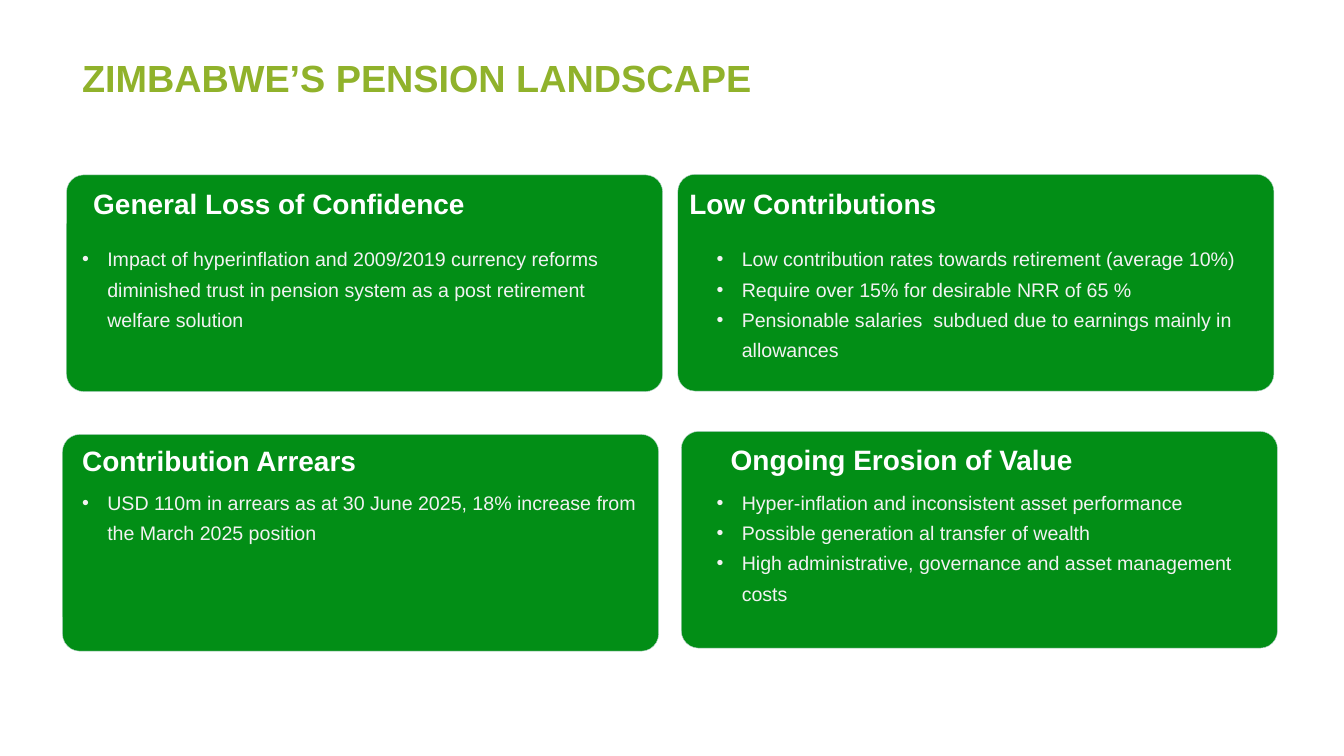
from lxml.etree import SubElement
from pptx import Presentation
from pptx.dml.color import RGBColor
from pptx.enum.shapes import MSO_SHAPE
from pptx.enum.text import MSO_ANCHOR, PP_ALIGN
from pptx.oxml.ns import qn
from pptx.util import Inches, Pt

GREEN = RGBColor(0x02, 0x8E, 0x16)
MINT = RGBColor(0xB7, 0xD5, 0xCA)
LIME = RGBColor(0x90, 0xB2, 0x2B)
WHITE = RGBColor(0xFF, 0xFF, 0xFF)
PALE = RGBColor(0xF2, 0xF2, 0xF2)

CARD_SIZE = (11.83, 4.3)
HEADING_SIZE = (8, 0.7)

CARDS = [
    ((1.32, 3.47), "General Loss of Confidence", (1.85, 3.78),
     ["Impact of hyperinflation and 2009/2019 currency reforms diminished trust "
      "in pension system as a post retirement welfare solution"],
     (1.63, 4.77, 11, 2.02)),
    ((13.45, 3.46), "Low Contributions", (13.68, 3.78),
     ["Low contribution rates towards retirement (average 10%)",
      "Require over 15% for desirable NRR of 65 %",
      "Pensionable salaries  subdued due to earnings mainly in allowances"],
     (14.22, 4.77, 10.87, 2.71)),
    ((1.24, 8.62), "Contribution Arrears", (1.63, 8.89),
     ["USD 110m in arrears as at 30 June 2025, 18% increase from the March 2025 position"],
     (1.63, 9.6, 11, 2.35)),
    ((13.52, 8.56), "Ongoing Erosion of Value", (14.5, 8.87),
     ["Hyper-inflation and inconsistent asset performance",
      "Possible generation al transfer of wealth",
      "High administrative, governance and asset management  costs"],
     (14.22, 9.6, 10.87, 3.03)),
]


def add_bullet(paragraph):
    """Give a paragraph a hanging round bullet."""
    properties = paragraph._p.get_or_add_pPr()
    properties.set("marL", str(Inches(0.5)))
    properties.set("indent", str(-Inches(0.5)))
    SubElement(properties, qn("a:buFont"), typeface="Arial")
    SubElement(properties, qn("a:buChar"), char="•")


def style_paragraph(paragraph, size, color, bold, line_spacing):
    """Set alignment, line spacing and the font of every run."""
    paragraph.alignment = PP_ALIGN.LEFT
    paragraph.line_spacing = line_spacing
    for span in paragraph.runs:
        span.font.name = "Arial"
        span.font.size = Pt(size)
        span.font.bold = bold
        span.font.color.rgb = color


def add_panel(page, place, lines):
    """Add a green text box without margins, one paragraph per line."""
    box = page.shapes.add_textbox(*map(Inches, place))
    box.fill.solid()
    box.fill.fore_color.rgb = GREEN
    frame = box.text_frame
    frame.word_wrap = True
    frame.margin_left = frame.margin_right = 0
    frame.margin_top = frame.margin_bottom = 0
    frame.text = "\n".join(lines)
    return frame.paragraphs


def add_card(page, corner, heading, heading_corner, points, points_place):
    """Add a rounded card with its heading and bullet points."""
    card = page.shapes.add_shape(
        MSO_SHAPE.ROUNDED_RECTANGLE, *map(Inches, corner + CARD_SIZE))
    card.adjustments[0] = 0.08
    card.shadow.inherit = False
    card.fill.solid()
    card.fill.fore_color.rgb = GREEN
    card.line.color.rgb = MINT
    card.line.width = Pt(0.6)
    for paragraph in add_panel(page, heading_corner + HEADING_SIZE, [heading]):
        style_paragraph(paragraph, 40, WHITE, True, Pt(41.7))
    for paragraph in add_panel(page, points_place, points):
        add_bullet(paragraph)
        style_paragraph(paragraph, 28, PALE, False, Pt(43.3))


def add_title(page, text):
    """Add the slide title."""
    box = page.shapes.add_textbox(*map(Inches, (1.53, 1.17, 20.91, 0.85)))
    frame = box.text_frame
    frame.word_wrap = True
    frame.vertical_anchor = MSO_ANCHOR.MIDDLE
    frame.text = text
    style_paragraph(frame.paragraphs[0], 54, LIME, True, 0.9)


def main():
    """Build the slide and save it."""
    deck = Presentation()
    deck.slide_width, deck.slide_height = Inches(26.67), Inches(15)
    page = deck.slides.add_slide(deck.slide_layouts[6])
    for card in CARDS:
        add_card(page, *card)
    add_title(page, "ZIMBABWE’S PENSION LANDSCAPE")
    deck.save("out.pptx")


if __name__ == "__main__":
    main()
